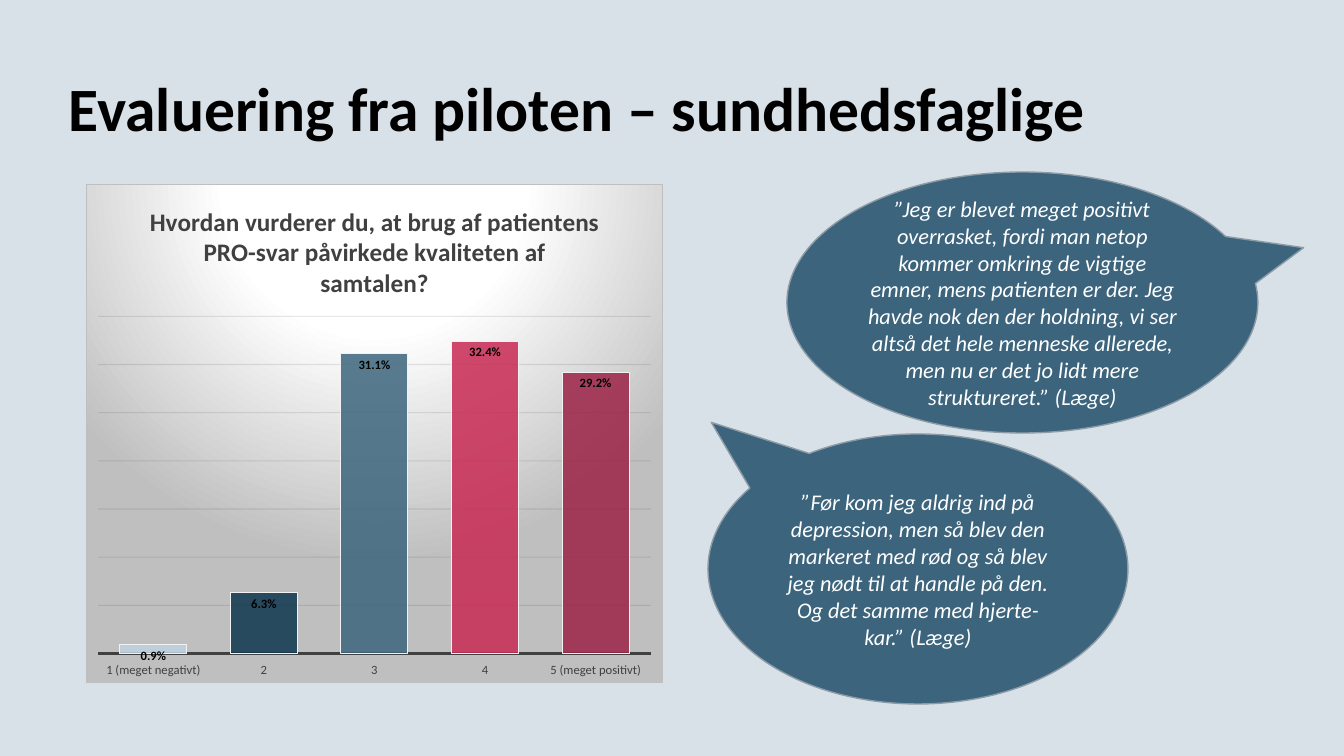
from lxml import etree
from pptx import Presentation
from pptx.chart.data import CategoryChartData
from pptx.dml.color import RGBColor
from pptx.enum.chart import XL_CHART_TYPE, XL_LABEL_POSITION, XL_TICK_LABEL_POSITION, XL_TICK_MARK
from pptx.enum.shapes import MSO_SHAPE
from pptx.enum.text import MSO_ANCHOR, PP_ALIGN
from pptx.oxml import parse_xml
from pptx.oxml.ns import nsdecls, qn
from pptx.util import Pt

SLIDE_W, SLIDE_H = 1344, 756
EMU_PER_PX = 12192000 / SLIDE_W

THEME = {
    "font": "Calibri",
    "background": "D9E1E8", "heading": "000000", "muted": "404040", "quote": "FFFFFF",
    "bubble": "3C657D", "bubble_line": "8D9BA6",
    "panel_light": "FFFFFF", "panel_dark": "BFBFBF", "grid": "0D0D0D", "bar_line": "F2F2F2",
    "bars": ["BED2E0", "0D364E", "3C657D", "C82A54", "9B2346"],
    "heading_size": 44, "chart_title_size": 18, "quote_size": 16, "label_size": 9,
}


def px(*lengths):
    return [round(length * EMU_PER_PX) for length in lengths]


def write_text(frame, text, *, size, color, bold=False, italic=False, align=None, spacing=None):
    paragraph = frame.paragraphs[0]
    paragraph.alignment = align
    paragraph.line_spacing = spacing
    run = paragraph.add_run()
    run.text = text
    run.font.name = THEME["font"]
    run.font.size = Pt(size)
    run.font.bold = bold
    run.font.italic = italic
    run.font.color.rgb = RGBColor.from_string(color)


deck = Presentation()
deck.slide_width, deck.slide_height = px(SLIDE_W, SLIDE_H)
slide = deck.slides.add_slide(deck.slide_layouts[6])
slide.background.fill.solid()
slide.background.fill.fore_color.rgb = RGBColor.from_string(THEME["background"])

# Ratings chart
ratings = CategoryChartData(number_format="0.0%")
ratings.categories = ["1 (meget negativt)", "2", "3", "4", "5 (meget positivt)"]
ratings.add_series("Series 1", [0.009, 0.063, 0.311, 0.324, 0.292])
chart = slide.shapes.add_chart(
    XL_CHART_TYPE.COLUMN_CLUSTERED, *px(86, 184, 577, 499), ratings).chart
chart.has_legend = False
chart.font.name = THEME["font"]
chart.font.size = Pt(10)
chart.has_title = True
write_text(chart.chart_title.text_frame,
           "Hvordan vurderer du, at brug af patientens PRO-svar påvirkede kvaliteten af samtalen?",
           size=THEME["chart_title_size"], color=THEME["muted"], bold=True)
chart.chart_title.include_in_layout = False

# Axes
rating_axis = chart.category_axis
rating_axis.major_tick_mark = XL_TICK_MARK.NONE
rating_axis.tick_label_position = XL_TICK_LABEL_POSITION.LOW
rating_axis.tick_labels.font.name = THEME["font"]
rating_axis.tick_labels.font.size = Pt(THEME["label_size"])
rating_axis.tick_labels.font.color.rgb = RGBColor.from_string(THEME["muted"])
rating_axis.format.line.color.rgb = RGBColor.from_string(THEME["muted"])
rating_axis.format.line.width = Pt(1.5)
share_axis = chart.value_axis
share_axis.visible = False
share_axis.minimum_scale, share_axis.maximum_scale, share_axis.major_unit = 0, 0.35, 0.05
share_axis.major_gridlines.format.line.color.rgb = RGBColor.from_string(THEME["grid"])
share_axis.major_gridlines.format.line.width = Pt(0.75)

# Bars and their labels
bars = chart.plots[0]
bars.gap_width = 65
bars.vary_by_categories = False
for index, color in enumerate(THEME["bars"]):
    bar = bars.series[0].points[index].format
    bar.fill.solid()
    bar.fill.fore_color.rgb = RGBColor.from_string(color)
    bar.line.color.rgb = RGBColor.from_string(THEME["bar_line"])
    bar.line.width = Pt(0.75)
shares = bars.series[0].data_labels
shares.show_value = True
shares.position = XL_LABEL_POSITION.INSIDE_END
shares.number_format, shares.number_format_is_linked = "0.0%", False
shares.font.name = THEME["font"]
shares.font.size = Pt(THEME["label_size"])
shares.font.bold = True
shares.font.color.rgb = RGBColor.from_string(THEME["heading"])

# Transparency of bars and gridlines
chart_space = chart.element
for query, opacity in [(".//c:dPt/c:spPr/a:solidFill/a:srgbClr", 85),
                       (".//c:majorGridlines//a:srgbClr", 10)]:
    for tint in chart_space.xpath(query):
        etree.SubElement(tint, qn("a:alpha"), val=str(opacity * 1000))

# Plot area placement, as shares of the chart
plot_area = chart_space.xpath("c:chart/c:plotArea")[0]
for old_layout in plot_area.findall(qn("c:layout")):
    plot_area.remove(old_layout)
plot_area.insert(0, parse_xml(
    f'<c:layout {nsdecls("c")}><c:manualLayout><c:layoutTarget val="inner"/>'
    '<c:xMode val="edge"/><c:yMode val="edge"/>'
    '<c:x val="0.02"/><c:y val="0.265"/><c:w val="0.96"/><c:h val="0.677"/>'
    '</c:manualLayout></c:layout>'))

# Radial panel behind the chart
stops = "".join(
    f'<a:gs pos="{position * 1000}"><a:srgbClr val="{THEME[name]}"/></a:gs>'
    for position, name in [(0, "panel_light"), (39, "panel_light"), (100, "panel_dark")])
chart_space.find(qn("c:chart")).addnext(parse_xml(
    f'<c:spPr {nsdecls("c", "a")}><a:gradFill><a:gsLst>{stops}</a:gsLst>'
    '<a:path path="circle"><a:fillToRect l="50000" t="-80000" r="50000" b="180000"/></a:path>'
    f'</a:gradFill><a:ln w="9525"><a:solidFill><a:srgbClr val="{THEME["panel_dark"]}"/>'
    '</a:solidFill></a:ln></c:spPr>'))

# Heading
heading = slide.shapes.add_textbox(*px(59, 73, 1222, 78)).text_frame
heading.word_wrap = True
write_text(heading, "Evaluering fra piloten – sundhedsfaglige", size=THEME["heading_size"],
           color=THEME["heading"], bold=True, spacing=0.9)

# Quotes: box, pointer tip, words
quotes = [
    ((787, 172, 471, 261), (0.597, -0.21),
     "”Jeg er blevet meget positivt overrasket, fordi man netop kommer omkring de vigtige emner, "
     "mens patienten er der. Jeg havde nok den der holdning, vi ser altså det hele menneske "
     "allerede, men nu er det jo lidt mere struktureret.” (Læge)"),
    ((708, 434, 420, 270), (-0.492, -0.543),
     "”Før kom jeg aldrig ind på depression, men så blev den markeret med rød og så blev jeg "
     "nødt til at handle på den. Og det samme med hjerte-kar.” (Læge)"),
]
for box, (tip_x, tip_y), words in quotes:
    bubble = slide.shapes.add_shape(MSO_SHAPE.OVAL_CALLOUT, *px(*box))
    bubble.adjustments[0], bubble.adjustments[1] = tip_x, tip_y
    bubble.shadow.inherit = False
    bubble.fill.solid()
    bubble.fill.fore_color.rgb = RGBColor.from_string(THEME["bubble"])
    bubble.line.color.rgb = RGBColor.from_string(THEME["bubble_line"])
    bubble.line.width = Pt(1)
    bubble.text_frame.word_wrap = True
    bubble.text_frame.vertical_anchor = MSO_ANCHOR.MIDDLE
    write_text(bubble.text_frame, words, size=THEME["quote_size"], color=THEME["quote"],
               italic=True, align=PP_ALIGN.CENTER)

deck.save("out.pptx")
